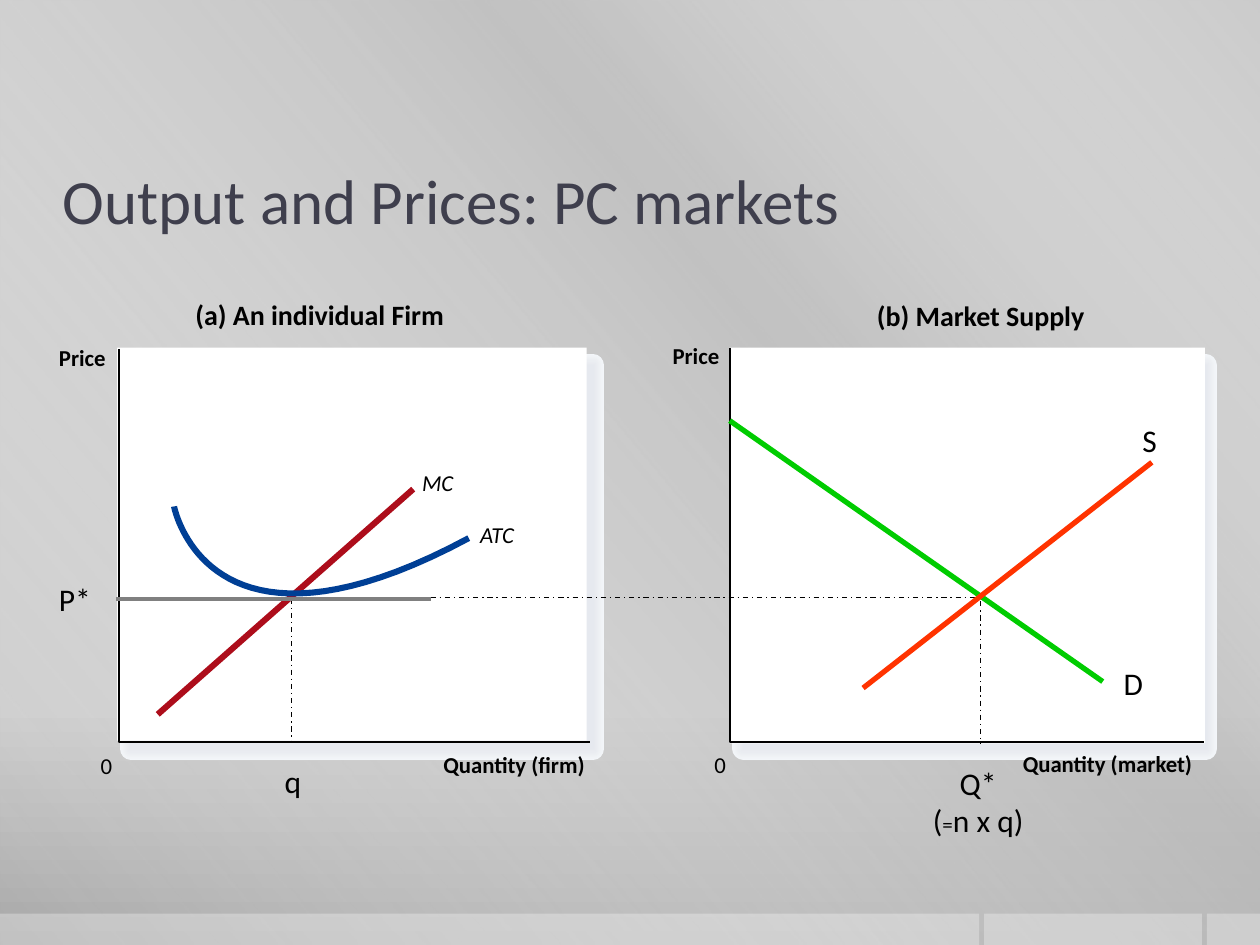
from dataclasses import dataclass

from lxml import etree
from pptx import Presentation
from pptx import util as u
from pptx.dml import color as dml_color
from pptx.enum import dml, shapes, text
from pptx.oxml import ns

FONT = "Calibri"
BLACK = "000000"
SHADOW_COLOURS = ["F3F6F9", "F2F4F8", "F1F4F7", "F0F2F5", "EEF1F4", "EDEFF3",
                  "EBEEF2", "EAECF1", "E9EBF0", "E7EAEF", "E6E9EF"]


# All lengths are in centimetres, sizes and line widths in points
@dataclass
class Panel:
    left: float
    top: float
    width: float
    height: float
    shadow_left: float
    axis_left: float
    axis_top: float
    axis_right: float


@dataclass
class Line:
    start: tuple[float, float]
    end: tuple[float, float]
    colour: str = BLACK
    width: float = 0.75
    dashed: bool = False


@dataclass
class Label:
    words: str
    left: float
    top: float
    width: float
    height: float = 0.56
    size: float = 13
    bold: bool = False
    italic: bool = False
    inset: bool = False


AXIS_BOTTOM = 14.96
PANELS = [
    Panel(2.36, 7.01, 9.47, 7.92, 2.64, 2.39, 7.04, 11.89),
    Panel(14.71, 7.01, 9.58, 7.98, 14.99, 14.71, 7.01, 24.28),
]
LINES = [
    Line((3.18, 14.4), (8.33, 9.86), "AD0D1B", 3.5),            # marginal cost
    Line((14.71, 8.48), (22.23, 13.74), "00CC00", 3),           # demand
    Line((2.39, 12.04), (19.76, 12.04), dashed=True),           # market price
    Line((17.4, 13.87), (23.22, 9.32), "FF3300", 3),            # supply
    Line((5.87, 12.07), (5.87, AXIS_BOTTOM), dashed=True),      # firm output
    Line((19.76, 12.12), (19.76, 14.99), dashed=True),          # market output
    Line((2.34, 12.07), (8.69, 12.07), "808080", 2.25),         # firm demand
]
ATC_CONTROLS = [(3.51, 10.21), (3.51, 10.21), (4.17, 13.69), (9.45, 10.85)]
LABELS = [
    Label("(a) An individual Firm", 3.94, 5.99, 5.26, 0.69, 16, bold=True),
    Label("Quantity (firm)", 8.94, 15.14, 3.18, bold=True),
    Label("0", 2.03, 15.16, 0.25),
    Label("Price", 1.19, 6.93, 1.12, bold=True),
    Label("(b) Market Supply", 17.68, 6.02, 4.22, 0.69, 16, bold=True),
    Label("Quantity (market)", 20.62, 15.11, 3.81, bold=True),
    Label("Price", 13.56, 6.88, 1.12, bold=True),
    Label("0", 14.4, 15.14, 0.25),
    Label("MC", 8.51, 9.45, 0.71, italic=True),
    Label("ATC", 9.68, 10.49, 0.91, italic=True),
    Label("S", 22.78, 8.36, 0.84, 1.02, 18, inset=True),
    Label("D", 22.4, 13.26, 0.94, 1.02, 18, inset=True),
    Label("q", 5.49, 15.24, 0.86, 1.02, 18, inset=True),
    Label("P*", 0.94, 11.56, 1.19, 1.02, 18, inset=True),
]


def colour(value: str) -> dml_color.RGBColor:
    return dml_color.RGBColor.from_string(value)


def add_alpha(colour_element, percent: float) -> None:
    etree.SubElement(colour_element, ns.qn("a:alpha"), val=str(round(percent * 1000)))


def set_gradient(fill, element, stops: list[tuple], angle: float) -> None:
    """Fill with (position, colour, opacity) stops; the angle runs clockwise."""
    fill.gradient()
    fill.gradient_angle = 360 - angle
    stop_list = element.find(".//" + ns.qn("a:gsLst"))
    for old_stop in list(stop_list):
        stop_list.remove(old_stop)
    for position, value, opacity in stops:
        stop = etree.SubElement(stop_list, ns.qn("a:gs"), pos=str(position * 1000))
        add_alpha(etree.SubElement(stop, ns.qn("a:srgbClr"), val=value), opacity)


def add_rectangle(slide, left, top, width, height, fill="FFFFFF", line_width=0.0):
    shape = slide.shapes.add_shape(shapes.MSO_SHAPE.RECTANGLE, u.Cm(left), u.Cm(top),
                                   u.Cm(width), u.Cm(height))
    shape.shadow.inherit = False
    shape.fill.solid()
    shape.fill.fore_color.rgb = colour(fill)
    if line_width:
        shape.line.color.rgb = colour(fill)
        shape.line.width = u.Pt(line_width)
    else:
        shape.line.fill.background()
    return shape


def add_outline(slide, points: list[tuple], line_colour: str, width: float) -> None:
    vertices = [(u.Cm(x), u.Cm(y)) for x, y in points]
    builder = slide.shapes.build_freeform(*vertices[0])
    builder.add_line_segments(vertices[1:], close=False)
    shape = builder.convert_to_shape()
    shape.shadow.inherit = False
    shape.fill.background()
    shape.line.color.rgb = colour(line_colour)
    shape.line.width = u.Pt(width)


def add_line(slide, line: Line) -> None:
    connector = slide.shapes.add_connector(
        shapes.MSO_CONNECTOR.STRAIGHT, *(u.Cm(value) for value in line.start + line.end))
    connector.line.color.rgb = colour(line.colour)
    connector.line.width = u.Pt(line.width)
    if line.dashed:
        connector.line.dash_style = dml.MSO_LINE.DASH_DOT
    etree.SubElement(connector._element.spPr, ns.qn("a:effectLst"))


def add_label(slide, label: Label):
    shape = slide.shapes.add_textbox(u.Cm(label.left), u.Cm(label.top),
                                     u.Cm(label.width), u.Cm(label.height))
    frame = shape.text_frame
    frame.text = label.words
    frame.word_wrap = False
    frame.auto_size = text.MSO_AUTO_SIZE.SHAPE_TO_FIT_TEXT
    if not label.inset:
        frame.margin_left = frame.margin_right = u.Cm(0)
        frame.margin_top = frame.margin_bottom = u.Cm(0)
    for paragraph in frame.paragraphs:
        for run in paragraph.runs:
            run.font.name = FONT
            run.font.size = u.Pt(label.size)
            run.font.bold = label.bold
            run.font.italic = label.italic
            run.font.color.rgb = colour(BLACK)
    return shape


def bezier_points(controls: list[tuple], steps: int = 40) -> list[tuple]:
    points = []
    for step in range(steps + 1):
        t = step / steps
        weights = ((1 - t) ** 3, 3 * t * (1 - t) ** 2, 3 * t ** 2 * (1 - t), t ** 3)
        points.append(tuple(sum(weight * control[axis] for weight, control
                                in zip(weights, controls)) for axis in (0, 1)))
    return points


def add_backdrop(slide) -> None:
    set_gradient(slide.background.fill, slide._element,
                 [(0, "CBCBCB", 100), (76, "C8C8C8", 100), (100, "A7A7A7", 100)], 90)
    sheen = add_rectangle(slide, 0, 0, 25.4, 19.05)
    set_gradient(sheen.fill, sheen._element, [(0, "FFFFFF", 0), (34, "BFBFBF", 61),
                                              (38, "BFBFBF", 76), (100, "FFFFFF", 0)], 140)
    for left, width in ((24.33, 1.07), (19.84, 4.39), (0, 19.74)):
        strip = add_rectangle(slide, left, 18.42, width, 0.63)
        add_alpha(strip._element.spPr.find(".//" + ns.qn("a:srgbClr")), 30)


def add_title(slide) -> None:
    title = add_label(slide, Label("Output and Prices: PC markets",
                                   1.27, 2.74, 22.86, 2.54, 36))
    frame = title.text_frame
    frame.word_wrap = True
    frame.auto_size = text.MSO_AUTO_SIZE.NONE
    frame.vertical_anchor = text.MSO_ANCHOR.MIDDLE
    frame.paragraphs[0].runs[0].font.color.rgb = colour("3F3F4D")


def add_market_output(slide) -> None:
    shape = add_label(slide, Label("Q*\n(", 18.49, 15.27, 2.46, 1.8, 18, inset=True))
    paragraphs = shape.text_frame.paragraphs
    for words, size in (("=", 12), ("n x q)", 18)):
        run = paragraphs[1].add_run()
        run.text = words
        run.font.name = FONT
        run.font.size = u.Pt(size)
        run.font.color.rgb = colour(BLACK)
    for paragraph in paragraphs:
        paragraph.alignment = text.PP_ALIGN.CENTER


def main() -> None:
    presentation = Presentation()
    presentation.slide_width, presentation.slide_height = u.Cm(25.4), u.Cm(19.05)
    slide = presentation.slides.add_slide(presentation.slide_layouts[6])
    add_backdrop(slide)
    add_title(slide)
    # Soft shadows: stacked rectangles with ever thinner edges
    for panel in PANELS:
        for layer, shade in enumerate(SHADOW_COLOURS):
            add_rectangle(slide, panel.shadow_left, 7.37, 9.32, 7.72, shade,
                          12.75 - 1.16 * layer)
    # Panels with their axes
    for panel in PANELS:
        add_rectangle(slide, panel.left, panel.top, panel.width, panel.height)
        add_outline(slide, [(panel.axis_left, panel.axis_top), (panel.axis_left, AXIS_BOTTOM),
                            (panel.axis_right, AXIS_BOTTOM)], BLACK, 1.13)
    # Curves and labels
    for line in LINES:
        add_line(slide, line)
    add_outline(slide, bezier_points(ATC_CONTROLS), "003F95", 3.5)
    for label in LABELS:
        add_label(slide, label)
    add_market_output(slide)
    presentation.save("out.pptx")


if __name__ == "__main__":
    main()
